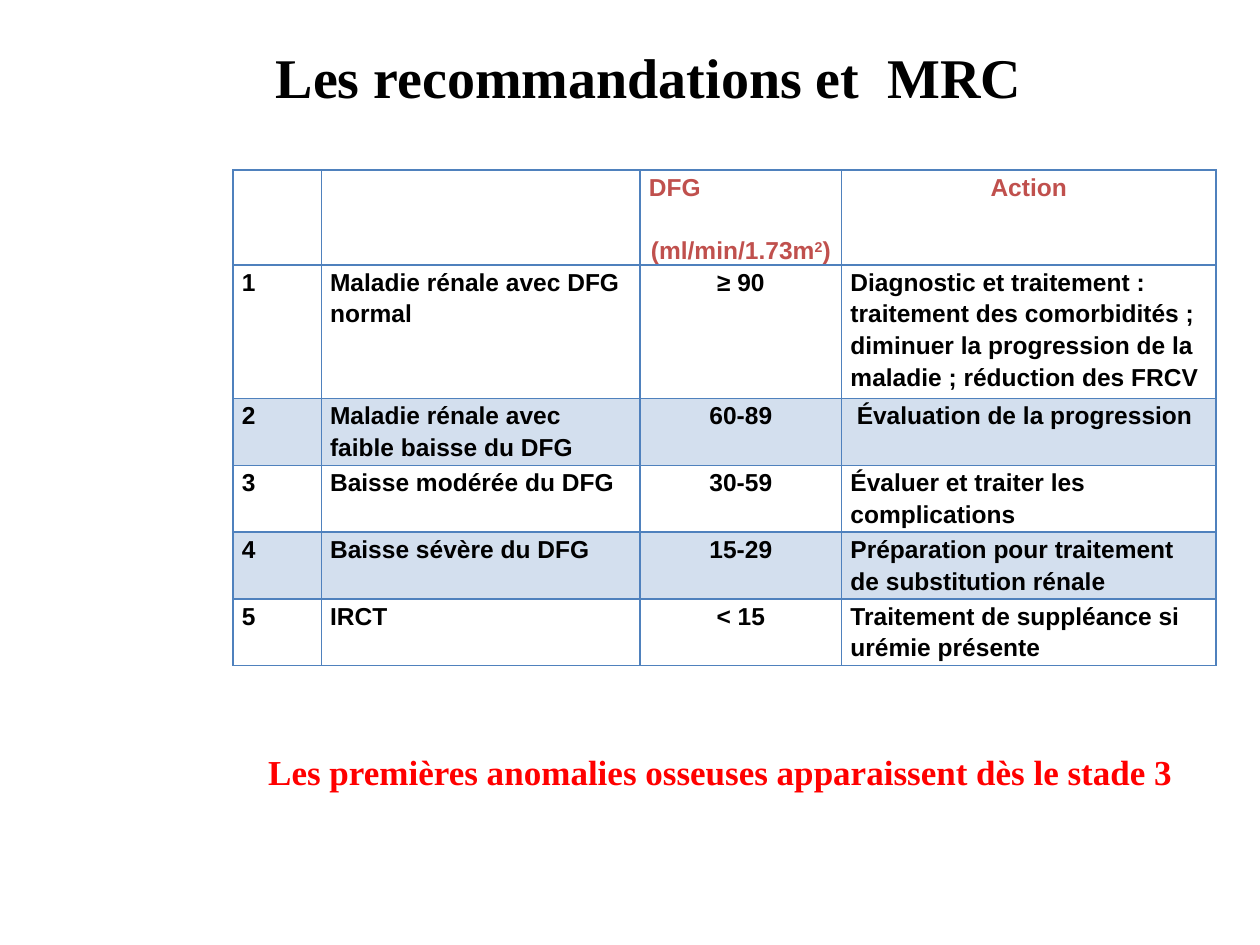
from dataclasses import dataclass

from lxml import etree
from pptx import Presentation, util as u
from pptx.dml.color import RGBColor
from pptx.enum import text
from pptx.oxml import parse_xml
from pptx.oxml.ns import nsdecls

LEFT, CENTER = text.PP_ALIGN.LEFT, text.PP_ALIGN.CENTER


@dataclass(frozen=True)
class Theme:
    title_font: str = "Times New Roman"
    table_font: str = "Arial"
    title_size: int = 32
    message_size: int = 20
    table_size: int = 14
    ink: str = "000000"
    header: str = "C0504D"
    message: str = "FF0000"
    border: str = "4F81BD"
    band: str = "D3DFEE"


class SlideBuilder:
    def __init__(self, slide, theme):
        self.slide = slide
        self.theme = theme

    def style(self, paragraph, name, size, color):
        font = paragraph.font
        font.name, font.size, font.bold = name, u.Pt(size), True
        font.color.rgb = RGBColor.from_string(color)

    def text_box(self, content, left, top, width, height, size, color):
        box = self.slide.shapes.add_textbox(
            u.Inches(left), u.Inches(top), u.Inches(width), u.Inches(height))
        box.text_frame.word_wrap = True
        paragraph = box.text_frame.paragraphs[0]
        paragraph.text = content
        self.style(paragraph, self.theme.title_font, size, color)

    def table(self, left, top, columns, rows, values):
        frame = self.slide.shapes.add_table(
            len(rows), len(columns), u.Inches(left), u.Inches(top),
            u.Inches(sum(columns)), u.Inches(sum(rows)))
        table = frame.table
        table.first_row = table.horz_banding = False
        for column, width in zip(table.columns, columns):
            column.width = u.Inches(width)
        for row, height in zip(table.rows, rows):
            row.height = u.Inches(height)
        for i, row_values in enumerate(values):
            for j, value in enumerate(row_values):
                cell = table.cell(i, j)
                self.cell_frame(cell, banded=i in (2, 4))
                if value:
                    color = self.theme.ink if i else self.theme.header
                    align = CENTER if i == 0 or j == 2 else LEFT
                    self.cell_text(cell.text_frame.paragraphs[0], value, align, color)
        return table

    def cell_frame(self, cell, banded):
        cell.margin_left = cell.margin_right = u.Inches(0.07)
        cell.margin_top = cell.margin_bottom = 0
        properties = cell._tc.get_or_add_tcPr()
        for side in "LRTB":
            properties.append(parse_xml(
                f'<a:ln{side} {nsdecls("a")} w="12700"><a:solidFill>'
                f'<a:srgbClr val="{self.theme.border}"/></a:solidFill></a:ln{side}>'))
        if banded:
            cell.fill.solid()
            cell.fill.fore_color.rgb = RGBColor.from_string(self.theme.band)
        else:
            cell.fill.background()

    def cell_text(self, paragraph, content, align, color, space_after=6):
        paragraph.text = content
        paragraph.alignment = align
        paragraph.line_spacing = 1.15
        paragraph.space_after = u.Pt(space_after)
        self.style(paragraph, self.theme.table_font, self.theme.table_size, color)

    def rate_header(self, cell):
        """Name of the rate, then its unit one line lower."""
        color = self.theme.header
        name = cell.text_frame.paragraphs[0]
        self.cell_text(name, "DFG", LEFT, color, space_after=18)
        unit = cell.text_frame.add_paragraph()
        self.cell_text(unit, "(ml/min/1.73m", CENTER, color)
        exponent = unit.add_run()
        exponent.text = "2"
        exponent._r.get_or_add_rPr().set("baseline", "30000")
        unit.add_run().text = ")"

    def indent(self, cell, width):
        properties = cell.text_frame.paragraphs[0]._p.get_or_add_pPr()
        properties.set("marL", str(u.Inches(width)))


STAGES = [
    ["", "", "", "Action"],
    ["1", "Maladie rénale avec DFG normal", "≥ 90",
     "Diagnostic et traitement : traitement des comorbidités ; "
     "diminuer la progression de la maladie ; réduction des FRCV"],
    ["2", "Maladie rénale avec faible baisse du DFG", "60-89",
     "Évaluation de la progression"],
    ["3", "Baisse modérée du DFG", "30-59", "Évaluer et traiter les complications"],
    ["4", "Baisse sévère du DFG", "15-29",
     "Préparation pour traitement de substitution rénale"],
    ["5", "IRCT", "< 15", "Traitement de suppléance si urémie présente"],
]


def main():
    presentation = Presentation()
    presentation.slide_width, presentation.slide_height = u.Inches(10), u.Inches(7.5)
    theme = Theme()
    slide = presentation.slides.add_slide(presentation.slide_layouts[6])
    builder = SlideBuilder(slide, theme)

    # Stages of the disease
    table = builder.table(1.85, 1.35, [0.7, 2.53, 1.6, 2.97],
                          [0.75, 1.06] + [0.53] * 4, STAGES)
    builder.rate_header(table.cell(0, 2))
    builder.indent(table.cell(2, 3), 0.05)

    # Key message
    builder.text_box("Les premières anomalies osseuses apparaissent dès le stade 3",
                     2.03, 5.91, 7.45, 0.44, theme.message_size, theme.message)

    # Title
    builder.text_box("Les recommandations et  MRC",
                     2.09, 0.29, 6.38, 0.64, theme.title_size, theme.ink)

    presentation.save("out.pptx")


if __name__ == "__main__":
    main()
